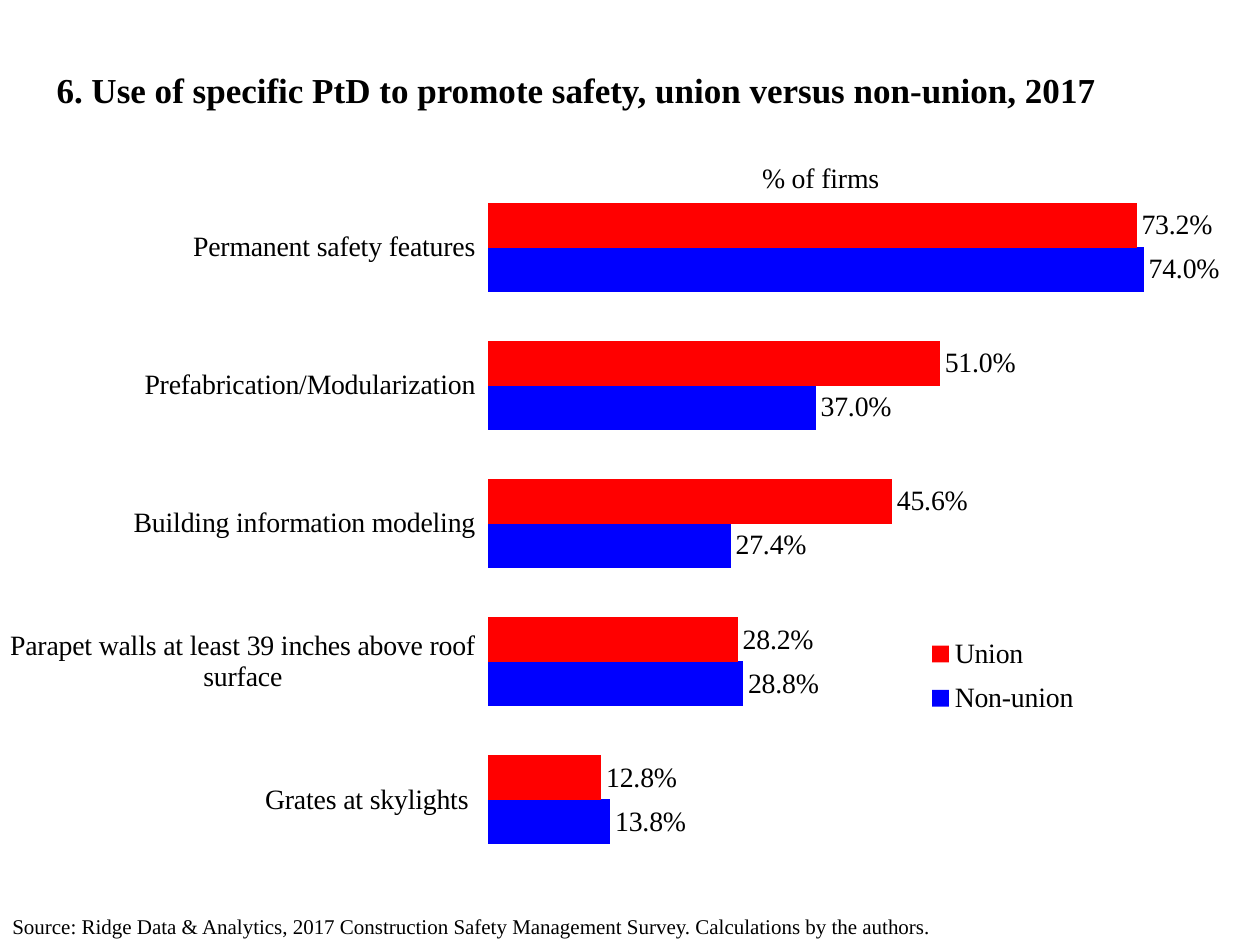
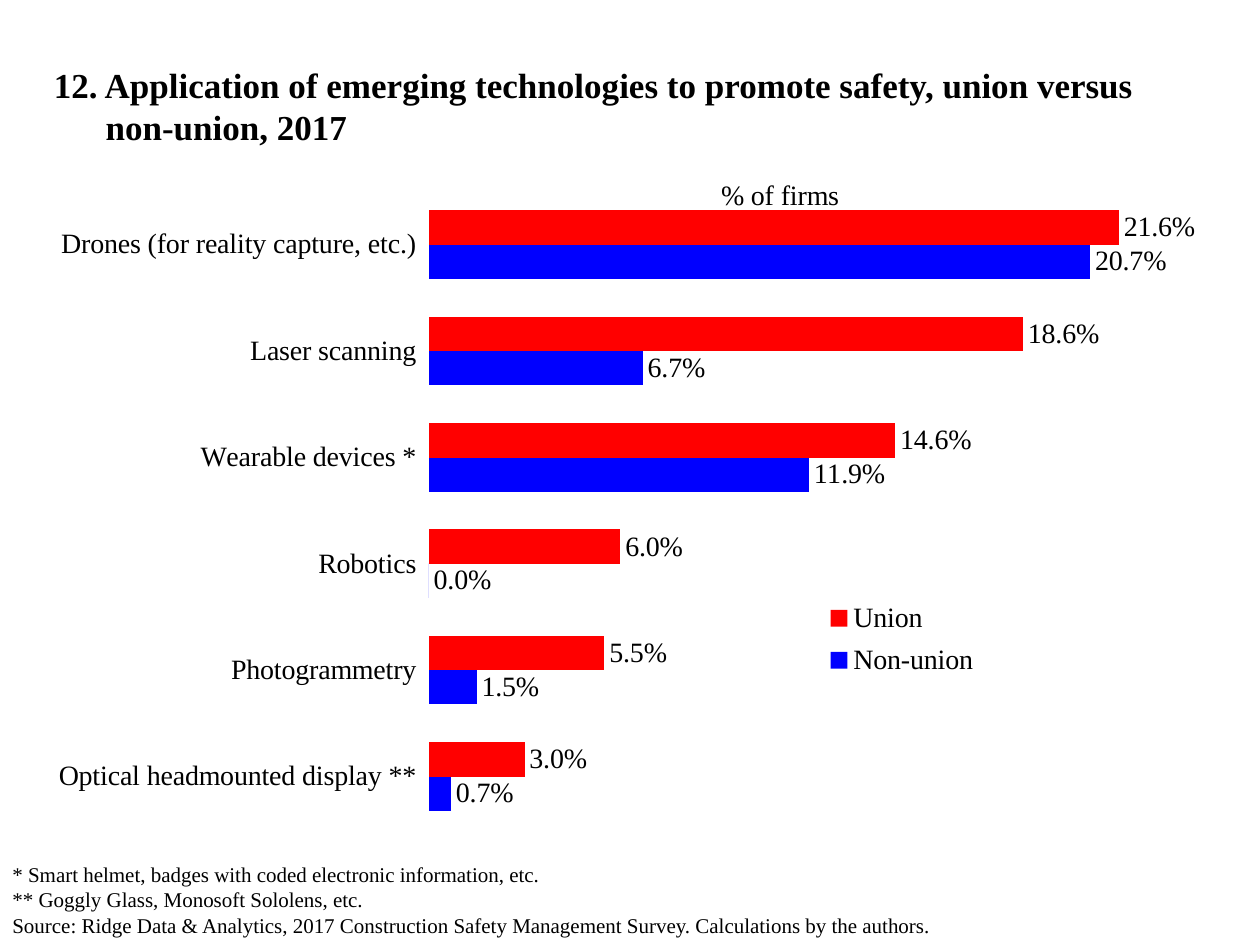
from lxml.etree import SubElement
from pptx import Presentation
from pptx.chart.data import CategoryChartData
from pptx.dml.color import RGBColor
from pptx.enum.chart import XL_CHART_TYPE, XL_LABEL_POSITION, XL_LEGEND_POSITION, XL_TICK_MARK
from pptx.enum.text import MSO_ANCHOR
from pptx.oxml import parse_xml
from pptx.oxml.ns import nsdecls, qn
from pptx.util import Inches, Pt

COLORS = {"text": "000000", "Non-union": "0000FF", "Union": "FF0000"}
FONT = "Times New Roman"
PERCENT = "0.0%"
SOURCE = ("Source: Ridge Data & Analytics, 2017 Construction Safety Management Survey. "
          "Calculations by the authors.")


def color(name):
    return RGBColor.from_string(COLORS[name])


def set_layout(element, x, y, width=None, height=None, inner=False):
    previous = element.find(qn("c:layout"))
    if previous is not None:
        element.remove(previous)
    layout = parse_xml(f"<c:layout {nsdecls('c')}><c:manualLayout/></c:layout>")
    settings = [("layoutTarget", "inner")] if inner else []
    settings += [("xMode", "edge"), ("yMode", "edge"), ("x", x), ("y", y)]
    if width is not None:
        settings += [("w", width), ("h", height)]
    for tag, value in settings:
        SubElement(layout[0], qn(f"c:{tag}")).set("val", str(value))
    overlay = element.find(qn("c:overlay"))
    if overlay is None:
        element.insert(0, layout)
    else:
        overlay.addprevious(layout)


class SurveyDeck:
    def __init__(self):
        self.presentation = Presentation()
        self.presentation.slide_width = Inches(10)
        self.presentation.slide_height = Inches(7.5)
        self.slide = None

    def add_slide(self):
        self.slide = self.presentation.slides.add_slide(self.presentation.slide_layouts[6])

    def style(self, font, size, bold=False):
        font.name = FONT
        font.size = Pt(size)
        font.bold = bold
        font.color.rgb = color("text")

    def add_text(self, lines, left, top, width, height, size, bold=False, anchor=MSO_ANCHOR.TOP):
        box = self.slide.shapes.add_textbox(Inches(left), Inches(top), Inches(width), Inches(height))
        frame = box.text_frame
        frame.word_wrap = True
        frame.vertical_anchor = anchor
        frame.text = "\n".join(lines)
        for paragraph in frame.paragraphs:
            self.style(paragraph.font, size, bold)
        return frame

    def add_title(self, text, left, top, width, height):
        frame = self.add_text([text], left, top, width, height, 20, True, MSO_ANCHOR.MIDDLE)
        properties = frame.paragraphs[0]._p.get_or_add_pPr()
        properties.set("marL", str(Inches(0.41)))
        properties.set("indent", str(-Inches(0.41)))

    def add_footer(self, lines, top):
        self.add_text(lines, 0, top, 10, 7.5 - top, 12)

    def add_bar_chart(self, top, rows, maximum, plot_area, title_place, legend_area):
        data = CategoryChartData(number_format=PERCENT)
        data.categories = [category for category, _, _ in reversed(rows)]
        for column, name in ((2, "Non-union"), (1, "Union")):
            data.add_series(name, [row[column] / 100 for row in reversed(rows)])
        chart = self.slide.shapes.add_chart(
            XL_CHART_TYPE.BAR_CLUSTERED, Inches(0.08), Inches(top),
            Inches(9.83), Inches(5.75), data).chart
        self.style(chart.font, 16)

        chart.has_title = True
        title = chart.chart_title
        title.text_frame.text = "% of firms"
        self.style(title.text_frame.paragraphs[0].font, 16)
        set_layout(title._element, *title_place)

        chart.has_legend = True
        chart.legend.position = XL_LEGEND_POSITION.RIGHT
        chart.legend.include_in_layout = False
        set_layout(chart.legend._element, *legend_area)
        set_layout(chart._chartSpace.chart.plotArea, *plot_area, inner=True)

        chart.category_axis.major_tick_mark = XL_TICK_MARK.OUTSIDE
        chart.category_axis.format.line.fill.background()
        chart.value_axis.visible = False
        chart.value_axis.has_major_gridlines = False
        chart.value_axis.minimum_scale = 0
        chart.value_axis.maximum_scale = maximum

        plot = chart.plots[0]
        plot.gap_width = 110
        plot.overlap = 2
        plot.vary_by_categories = False
        plot.has_data_labels = True
        labels = plot.data_labels
        labels.show_value = True
        labels.number_format = PERCENT
        labels.number_format_is_linked = False
        labels.position = XL_LABEL_POSITION.OUTSIDE_END
        self.style(labels.font, 16)
        for series in plot.series:
            series.format.fill.solid()
            series.format.fill.fore_color.rgb = color(series.name)
            series.invert_if_negative = False


def build_design_slide(deck):
    deck.add_slide()
    deck.add_title("6. Use of specific PtD to promote safety, union versus non-union, 2017",
                   0.35, 0.42, 9.29, 0.58)
    rows = [
        ("Permanent safety features", 73.2, 74.0),
        ("Prefabrication/Modularization", 51.0, 37.0),
        ("Building information modeling", 45.6, 27.4),
        ("Parapet walls at least 39 inches above roof surface", 28.2, 28.8),
        ("Grates at skylights ", 12.8, 13.8),
    ]
    deck.add_bar_chart(1.17, rows, 0.8, (0.381, 0.043, 0.577, 0.953),
                       (0.6, 0.01), (0.73, 0.66, 0.14, 0.14))
    deck.add_footer([SOURCE], 7.2)


def build_technology_slide(deck):
    deck.add_slide()
    deck.add_title("12. Application of emerging technologies to promote safety, union versus"
                   "\vnon-union, 2017", 0.33, 0.5, 9.33, 0.67)
    rows = [
        ("Drones (for reality capture, etc.)", 21.6, 20.7),
        ("Laser scanning", 18.6, 6.7),
        ("Wearable devices *", 14.6, 11.9),
        ("Robotics", 6.0, 0.0),
        ("Photogrammetry", 5.5, 1.5),
        ("Optical headmounted display **", 3.0, 0.7),
    ]
    deck.add_bar_chart(1.25, rows, 0.25, (0.338, 0.047, 0.645, 0.881),
                       (0.57, 0.02), (0.65, 0.6, 0.14, 0.13))
    deck.add_footer(["* Smart helmet, badges with coded electronic information, etc.",
                     "** Goggly Glass, Monosoft Sololens, etc.", SOURCE], 6.79)


def main():
    deck = SurveyDeck()
    build_design_slide(deck)
    build_technology_slide(deck)
    deck.presentation.save("out.pptx")


if __name__ == "__main__":
    main()
